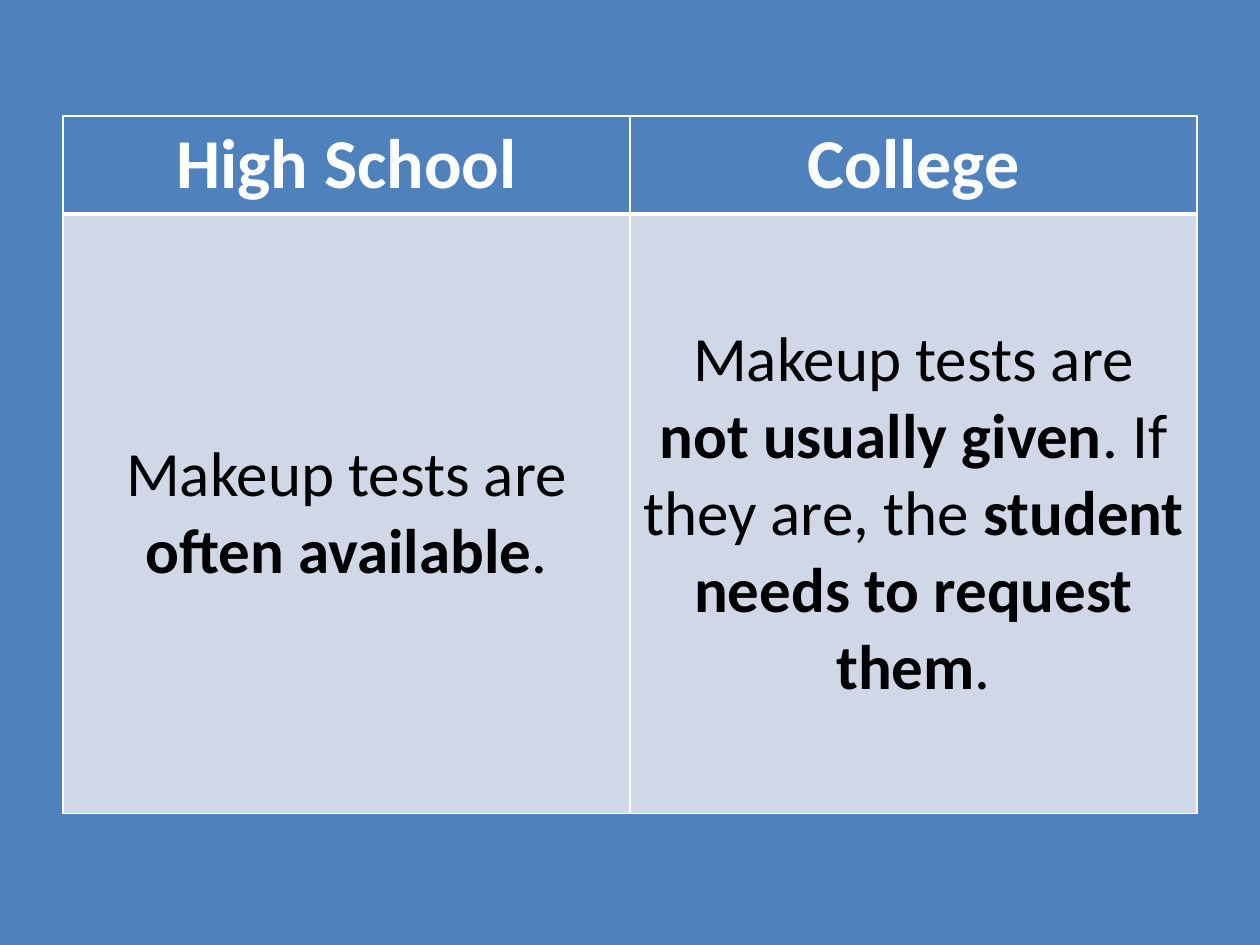
from lxml.etree import SubElement
from pptx import Presentation
from pptx.dml.color import RGBColor
from pptx.enum.text import MSO_ANCHOR as Anchor, PP_ALIGN as Align
from pptx.oxml.ns import qn
from pptx.util import Inches, Pt

BLUE, PALE, WHITE, BLACK = "4F81BD", "D0D8E8", "FFFFFF", "000000"

HEADINGS = [[("High School", True)], [("College", True)]]
POLICIES = [
    [("Makeup tests are ", False), ("often available", True), (".", False)],
    [
        ("Makeup tests are ", False),
        ("not usually given", True),
        (". If they are, the ", False),
        ("student needs to request them", True),
        (".", False),
    ],
]
HEADING_STYLE = {"size": 40, "color": WHITE, "fill": BLUE, "anchor": Anchor.TOP, "bottom": 3}
POLICY_STYLE = {"size": 36, "color": BLACK, "fill": PALE, "anchor": Anchor.MIDDLE, "bottom": 1}


def paint(fill, color):
    """Give a fill one solid colour."""
    fill.solid()
    fill.fore_color.rgb = RGBColor.from_string(color)


def draw_borders(cell, widths, color):
    """Line the sides of a cell with the given widths in points."""
    properties = cell._tc.get_or_add_tcPr()
    for side, width in widths.items():
        border = SubElement(properties, qn(f"a:ln{side}"), w=str(Pt(width)))
        solid = SubElement(border, qn("a:solidFill"))
        SubElement(solid, qn("a:srgbClr"), val=color)


def fill_cell(cell, phrases, style):
    """Write phrases into a cell in the style of its row."""
    draw_borders(cell, {"L": 1, "R": 1, "T": style.get("top", 1), "B": style["bottom"]}, WHITE)
    paint(cell.fill, style["fill"])
    cell.vertical_anchor = style["anchor"]
    paragraph = cell.text_frame.paragraphs[0]
    paragraph.alignment = Align.CENTER
    for words, bold in phrases:
        run = paragraph.add_run()
        run.text = words
        font_format = {"name": "Calibri", "size": Pt(style["size"]), "bold": bold}
        for attribute, value in font_format.items():
            setattr(run.font, attribute, value)
        paint(run.font.fill, style["color"])


def add_comparison(slide, left, top, width, height, heading_height):
    """Place the comparison of test policies in the given box."""
    rows = [
        (HEADINGS, HEADING_STYLE, heading_height),
        (POLICIES, {**POLICY_STYLE, "top": HEADING_STYLE["bottom"]}, height - heading_height),
    ]
    comparison = slide.shapes.add_table(
        len(rows), len(HEADINGS), left, top, width, height
    ).table
    for row, (entries, style, row_height) in enumerate(rows):
        comparison.rows[row].height = row_height
        for column, phrases in enumerate(entries):
            fill_cell(comparison.cell(row, column), phrases, style)


def main():
    """Build and save the slide."""
    deck = Presentation()
    deck.slide_width, deck.slide_height = Inches(10), Inches(7.5)
    slide = deck.slides.add_slide(deck.slide_layouts[6])
    paint(slide.background.fill, BLUE)
    add_comparison(slide, Inches(0.5), Inches(0.92), Inches(9), Inches(5.5), Inches(0.74))
    deck.save("out.pptx")


if __name__ == "__main__":
    main()
